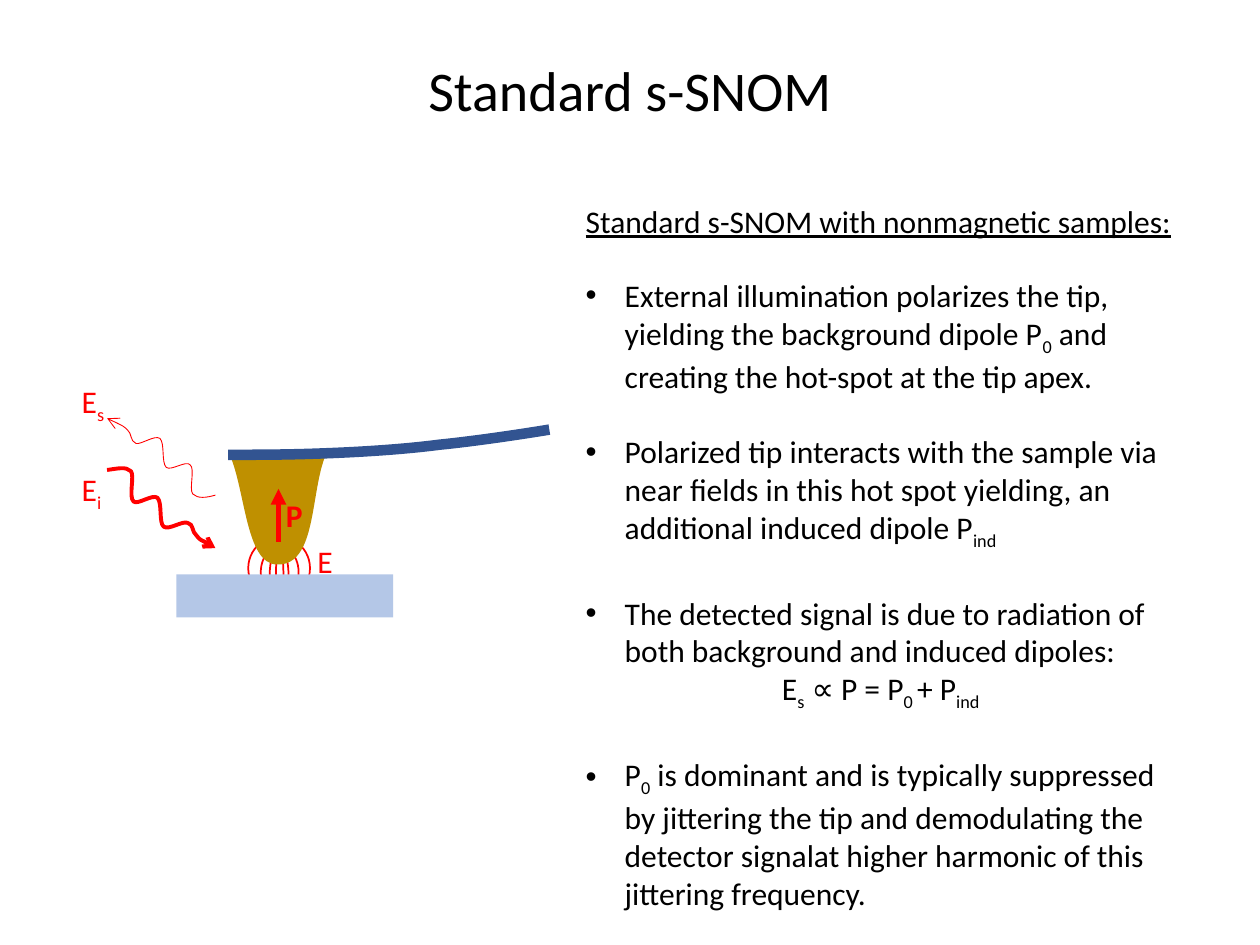
from dataclasses import dataclass

from lxml.etree import SubElement
from pptx import Presentation
from pptx.dml.color import RGBColor
from pptx.enum.shapes import MSO_CONNECTOR as Connector, MSO_SHAPE as Shape
from pptx.enum.text import MSO_ANCHOR as Anchor, MSO_AUTO_SIZE as AutoSize, PP_ALIGN as Align
from pptx.oxml.ns import qn
from pptx.util import Inches, Pt

COLUMNS, ROWS = 1000, 750
UNIT = Inches(10) // COLUMNS
RED, BLACK = "FF0000", "000000"
GOLD, NAVY, PALE_BLUE = "BF9000", "325491", "B4C7E7"
HANG = 31


@dataclass
class Area:
    left: int
    top: int
    width: int
    height: int

    def lengths(self) -> list[int]:
        return [value * UNIT for value in (self.left, self.top, self.width, self.height)]


@dataclass
class Curve:
    points: list
    color: str
    weight: float = 0
    filled: bool = False
    arrow: str = ""


@dataclass
class Label:
    area: Area
    text: str
    bold: bool = False
    wrap: bool = True


@dataclass
class Item:
    text: str
    gap: float = 0
    bullet: bool = True
    underline: bool = False
    align: Align = Align.LEFT


FIELD_LINES = [
    Area(219, 434, 6, 46),
    Area(207, 434, 30, 40),
    Area(214, 434, 15, 46),
    Area(197, 426, 49, 50),
]
TIP = Curve([(259, 360), (246, 389), (252, 449), (220, 448),
             (195, 448), (195, 389), (182, 360)], GOLD, filled=True)
INCIDENT = Curve([
    (85, 373), (93, 372), (100, 370), (104, 374), (107, 378), (102, 394), (106, 398),
    (109, 401), (121, 392), (125, 395), (129, 399), (126, 415), (130, 418),
    (134, 421), (145, 413), (149, 415), (154, 416), (152, 422), (156, 425),
    (159, 429), (170, 434), (171, 435)], RED, 2.25, arrow="arrow")
SCATTERED = Curve([
    (171, 393), (164, 395), (157, 396), (153, 392), (150, 388), (155, 372), (151, 369),
    (148, 365), (136, 374), (132, 371), (128, 367), (131, 352), (127, 348),
    (123, 345), (112, 353), (108, 352), (103, 350), (105, 344), (101, 341),
    (98, 338), (86, 332), (85, 332)], RED, 0.5, arrow="arrow")
CANTILEVER = Curve([
    (181, 361), (203, 361), (226, 361), (254, 360), (282, 359), (318, 357), (349, 353),
    (379, 350), (418, 344), (436, 341)], NAVY, 6)
TIP_LABELS = [
    Label(Area(217, 389, 34, 40), "P", bold=True, wrap=False),
    Label(Area(55, 368, 49, 40), "E|i"),
    Label(Area(55, 298, 49, 40), "E|s"),
]
FIELD_LABEL = Label(Area(242, 425, 26, 40), "E")
ITEMS = [
    Item("Standard s-SNOM with nonmagnetic samples:", bullet=False, underline=True),
    Item("External illumination polarizes the tip, yielding the background dipole P|0|"
         " and creating the hot-spot at the tip apex.", 21),
    Item("Polarized tip interacts with the sample via near fields in this hot spot "
         "yielding, an additional induced dipole P|ind", 21.5),
    Item("The detected signal is due to radiation of both background and induced dipoles:",
         24.5),
    Item("E|s| ∝ P = P|0 |+ P|ind", bullet=False, align=Align.CENTER),
    Item("P|0| is dominant and is typically suppressed by jittering the tip and "
         "demodulating the detector signalat higher harmonic of this jittering frequency.",
         24.5),
]


def color(value: str) -> RGBColor:
    return RGBColor.from_string(value)


def style(shape, fill: str = "", line: str = "", weight: float = 0) -> None:
    shape.shadow.inherit = False
    if fill:
        shape.fill.solid()
        shape.fill.fore_color.rgb = color(fill)
    else:
        shape.fill.background()
    if line:
        shape.line.color.rgb = color(line)
        shape.line.width = Pt(weight)
    else:
        shape.line.fill.background()


def add_arrowhead(shape, kind: str) -> None:
    SubElement(shape.line._get_or_add_ln(), qn("a:tailEnd"), type=kind)


def add_preset(page, kind: Shape, area: Area, **look) -> None:
    style(page.shapes.add_shape(kind, *area.lengths()), **look)


def bend_lines(shape) -> None:
    lines = list(shape._element.iter(qn("a:lnTo")))
    for first, second, third in zip(lines[::3], lines[1::3], lines[2::3]):
        first.tag = qn("a:cubicBezTo")
        for line in (second, third):
            first.append(line[0])
            line.getparent().remove(line)


def add_curve(page, curve: Curve) -> None:
    start, *rest = [(x * UNIT, y * UNIT) for x, y in curve.points]
    builder = page.shapes.build_freeform(*start)
    builder.add_line_segments(rest, close=False)
    shape = builder.convert_to_shape()
    bend_lines(shape)
    if curve.filled:
        style(shape, fill=curve.color)
    else:
        style(shape, line=curve.color, weight=curve.weight)
    if curve.arrow:
        add_arrowhead(shape, curve.arrow)


def add_arrow(page, start: tuple, end: tuple, line: str, weight: float) -> None:
    arrow = page.shapes.add_connector(
        Connector.STRAIGHT, *(value * UNIT for value in (*start, *end)))
    arrow.line.color.rgb = color(line)
    arrow.line.width = Pt(weight)
    add_arrowhead(arrow, "triangle")
    SubElement(arrow._element.spPr, qn("a:effectLst"))


def add_box(page, area: Area, wrap: bool = True, anchor: Anchor = Anchor.TOP):
    frame = page.shapes.add_textbox(*area.lengths()).text_frame
    frame.word_wrap = wrap
    frame.auto_size = AutoSize.NONE
    frame.vertical_anchor = anchor
    return frame


def write(para, text: str, *, size: float = 18, ink: str = BLACK, bold: bool = False,
          underline: bool = False, align: Align = Align.LEFT) -> None:
    para.alignment = align
    for index, part in enumerate(text.split("|")):
        span = para.add_run()
        span.text = part
        font = span.font
        font.name, font.size, font.bold = "Calibri", Pt(size), bold
        font.underline = underline
        font.color.rgb = color(ink)
        if index % 2:
            span._r.get_or_add_rPr().set("baseline", "-25000")


def add_label(page, label: Label) -> None:
    para = add_box(page, label.area, label.wrap).paragraphs[0]
    write(para, label.text, ink=RED, bold=label.bold)


def add_bullet(para) -> None:
    props = para._p.get_or_add_pPr()
    props.set("marL", str(HANG * UNIT))
    props.set("indent", str(-HANG * UNIT))
    SubElement(props, qn("a:buFont"), typeface="Arial")
    SubElement(props, qn("a:buChar"), char="•")


def add_items(page, area: Area, items: list[Item]) -> None:
    frame = add_box(page, area)
    for index, item in enumerate(items):
        para = frame.add_paragraph() if index else frame.paragraphs[0]
        if item.bullet:
            add_bullet(para)
        para.space_before = Pt(item.gap)
        write(para, item.text, underline=item.underline, align=item.align)


def main() -> None:
    deck = Presentation()
    deck.slide_width, deck.slide_height = COLUMNS * UNIT, ROWS * UNIT
    page = deck.slides.add_slide(deck.slide_layouts[6])
    for area in FIELD_LINES:
        add_preset(page, Shape.OVAL, area, line=RED, weight=1)
    add_curve(page, TIP)
    title = add_box(page, Area(69, 42, 862, 64), anchor=Anchor.MIDDLE).paragraphs[0]
    title.line_spacing = 0.9
    write(title, "Standard s-SNOM", size=32, align=Align.CENTER)
    for curve in (INCIDENT, SCATTERED, CANTILEVER):
        add_curve(page, curve)
    add_arrow(page, (221, 430), (221, 388), RED, 3)
    for label in TIP_LABELS:
        add_label(page, label)
    add_items(page, Area(455, 155, 488, 535), ITEMS)
    add_preset(page, Shape.RECTANGLE, Area(140, 456, 172, 34), fill=PALE_BLUE)
    add_label(page, FIELD_LABEL)
    deck.save("out.pptx")


if __name__ == "__main__":
    main()
